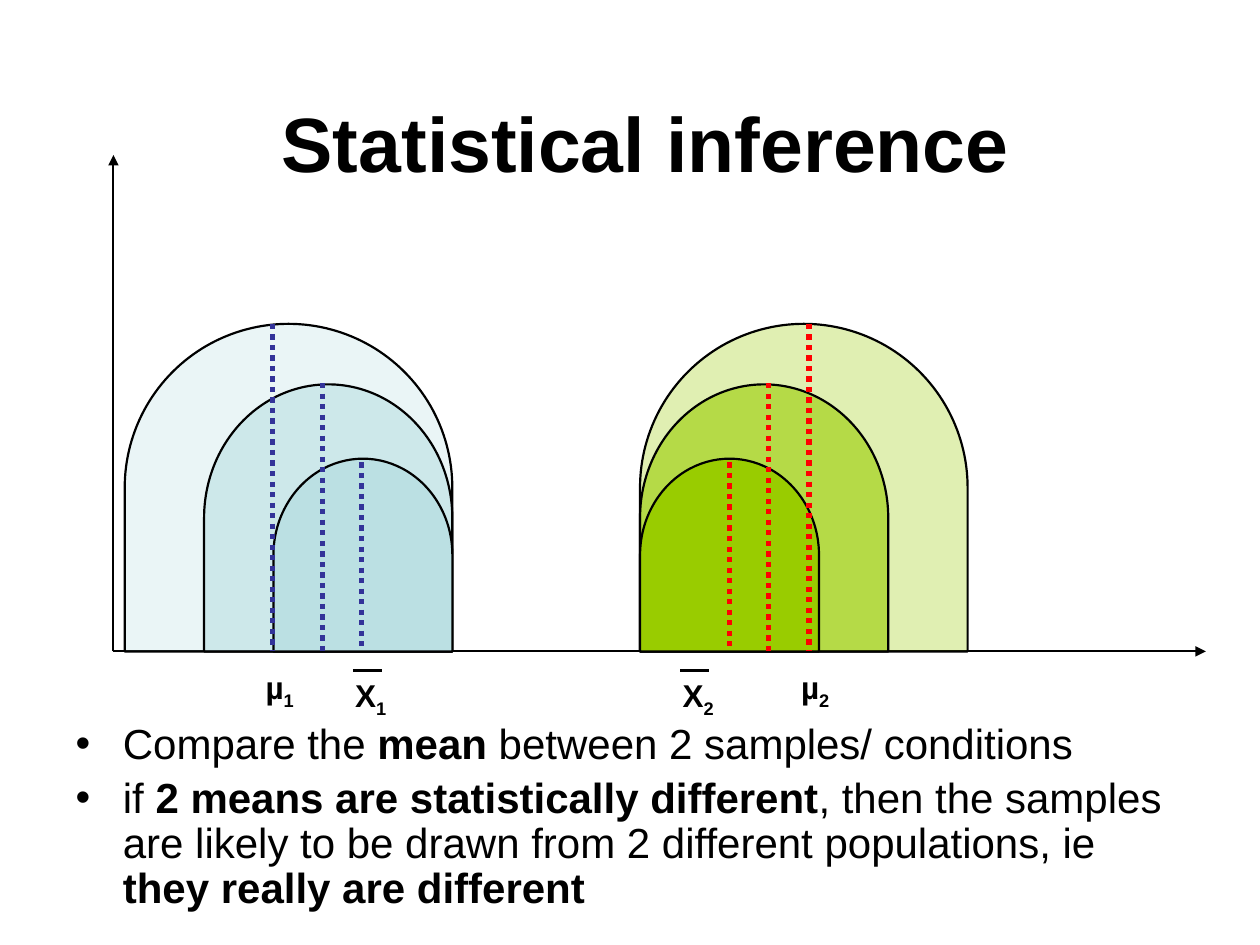
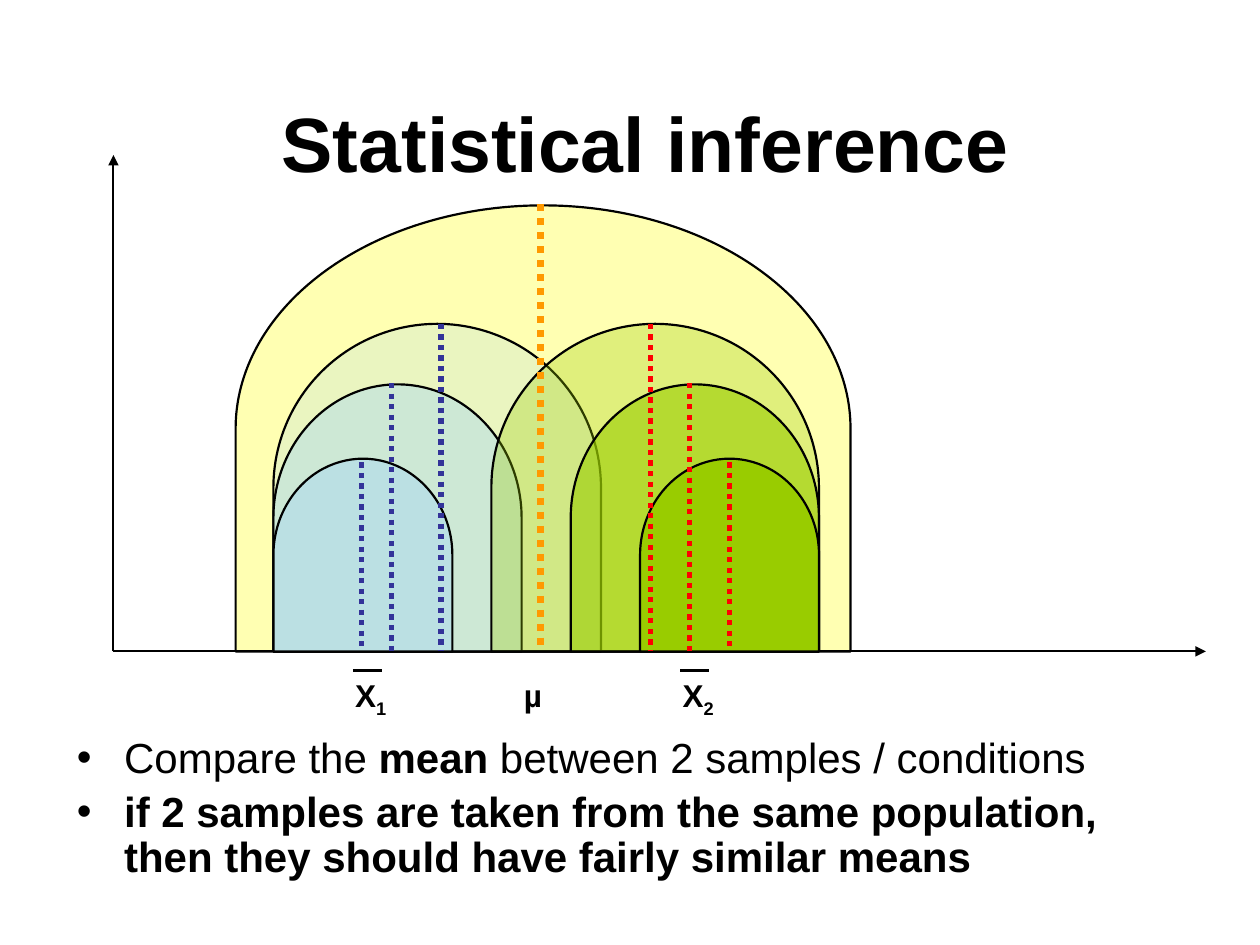
from dataclasses import dataclass

from lxml.etree import SubElement
from pptx import Presentation
from pptx.dml.color import RGBColor
from pptx.enum.dml import MSO_LINE_DASH_STYLE as Dash
from pptx.enum.shapes import MSO_CONNECTOR as Connector, MSO_SHAPE as Preset
from pptx.enum.text import MSO_ANCHOR as Anchor, MSO_AUTO_SIZE as AutoSize, PP_ALIGN as Align
from pptx.oxml.ns import qn
from pptx.util import Inches, Pt

# Shared look and geometry (lengths in inches)
FONT = "Arial"
BLACK, BLUE, NAVY, GREEN = "000000", "BBE0E3", "333399", "99CC00"
RED, YELLOW, ORANGE = "FF0000", "FFFF00", "FF9900"
TITLE_BOX = (0.67, 0.5, 8.91, 1.25)
AXIS_LEFT, AXIS_TOP, AXIS_RIGHT, BASE = 0.9, 1.23, 9.57, 5.17


@dataclass(frozen=True)
class Dome:
    width: float
    height: float
    opacity: int
    mean_top: float


POPULATION = Dome(4.88, 3.54, 30, 1.62)
NESTED = (Dome(2.6, 2.6, 30, 2.57), Dome(1.97, 2.12, 60, 3.04), Dome(1.42, 1.53, 100, 3.67))


@dataclass(frozen=True)
class Family:
    """Nested domes that share one vertical edge, with their mean lines."""
    edge: float
    side: str
    fill: str
    mean_color: str
    means: tuple[float, ...]
    domes: tuple[Dome, ...] = NESTED
    mean_width: float = 3


@dataclass(frozen=True)
class Label:
    left: float
    top: float
    letter: str
    index: str = ""
    bar: bool = False


@dataclass(frozen=True)
class Page:
    families: tuple[Family, ...]
    labels: tuple[Label, ...]
    body_box: tuple[float, ...]
    bullets: tuple


SAMPLE_LABELS = (Label(2.72, 5.32, "X", "1", True), Label(5.32, 5.32, "X", "2", True))

PAGES = (
    Page(
        (Family(3.59, "right", BLUE, NAVY, (2.16, 2.56, 2.87)),
         Family(5.08, "left", GREEN, RED, (6.42, 6.1, 5.79))),
        SAMPLE_LABELS + (Label(2.01, 5.25, "µ", "1"), Label(6.26, 5.25, "µ", "2")),
        (0.5, 5.69, 9, 1.68),
        ((("Compare the ", False), ("mean", True), (" between 2 samples/ conditions", False)),
         (("if ", False), ("2 means are statistically different", True),
          (", then the samples are likely to be drawn from 2 different populations, ie ", False),
          ("they really are different", True))),
    ),
    Page(
        (Family(1.87, "left", YELLOW, ORANGE, (4.29,), (POPULATION,), 4),
         Family(2.17, "left", BLUE, NAVY, (3.5, 3.11, 2.87)),
         Family(6.5, "right", GREEN, RED, (5.16, 5.47, 5.79))),
        SAMPLE_LABELS + (Label(4.06, 5.32, "µ"),),
        (0.51, 5.8, 9, 1.53),
        ((("Compare the ", False), ("mean", True), (" between 2 samples / conditions", False)),
         (("if 2 samples are taken from the same population, "
           "then they should have fairly similar means", True),)),
    ),
)


def rgb(color: str) -> RGBColor:
    return RGBColor.from_string(color)


def add_span(para, text: str, *, size: float, bold: bool = False,
             color: str = BLACK, baseline: int = 0) -> None:
    span = para.add_run()
    span.text = text
    font = span.font
    font.name, font.size, font.bold = FONT, Pt(size), bold
    font.color.rgb = rgb(color)
    if baseline:
        span._r.get_or_add_rPr().set("baseline", str(baseline * 1000))


def place(shape, box: tuple[float, ...]) -> None:
    shape.left, shape.top, shape.width, shape.height = map(Inches, box)


def add_line(slide, start: tuple[float, float], end: tuple[float, float], *,
             width: float = 1.25, color: str = BLACK, dotted: bool = False,
             arrow: bool = False) -> None:
    connector = slide.shapes.add_connector(
        Connector.STRAIGHT, *map(Inches, start), *map(Inches, end))
    line = connector.line
    line.width = Pt(width)
    line.color.rgb = rgb(color)
    if dotted:
        line.dash_style = Dash.ROUND_DOT
    if arrow:
        SubElement(line._get_or_add_ln(), qn("a:tailEnd"), type="triangle")
    SubElement(connector._element.spPr, qn("a:effectLst"))


def add_dome(slide, dome: Dome, family: Family) -> None:
    left = family.edge - (dome.width if family.side == "right" else 0)
    # A quarter turn swaps width and height around the centre
    center_x, center_y = left + dome.width / 2, BASE - dome.height / 2
    shape = slide.shapes.add_shape(
        Preset.FLOWCHART_DELAY,
        Inches(center_x - dome.height / 2), Inches(center_y - dome.width / 2),
        Inches(dome.height), Inches(dome.width))
    shape.rotation = 270
    shape.shadow.inherit = False
    shape.fill.solid()
    shape.fill.fore_color.rgb = rgb(family.fill)
    shape.line.color.rgb = rgb(BLACK)
    shape.line.width = Pt(1.25)
    if dome.opacity < 100:
        color = shape._element.spPr.find(qn("a:solidFill"))[0]
        SubElement(color, qn("a:alpha"), val=str(dome.opacity * 1000))


def add_means(slide, family: Family) -> None:
    for dome, mean in zip(family.domes, family.means):
        add_line(slide, (mean, dome.mean_top), (mean, BASE),
                 width=family.mean_width, color=family.mean_color, dotted=True)


def add_label(slide, label: Label) -> None:
    box = slide.shapes.add_textbox(
        Inches(label.left), Inches(label.top), Inches(0.6), Inches(0.4))
    box.text_frame.word_wrap = True
    para = box.text_frame.paragraphs[0]
    add_span(para, label.letter, size=18, bold=True)
    if label.index:
        add_span(para, label.index, size=18, bold=True, baseline=-25)
    if label.bar:
        start = label.left + 0.08
        add_line(slide, (start, label.top), (start + 0.23, label.top), width=1.75)


def fill_title(slide) -> None:
    title = slide.shapes.title
    place(title, TITLE_BOX)
    frame = title.text_frame
    frame.auto_size, frame.vertical_anchor = AutoSize.NONE, Anchor.MIDDLE
    para = frame.paragraphs[0]
    para.alignment = Align.CENTER
    add_span(para, "Statistical inference", size=44, bold=True)


def fill_body(slide, page: Page) -> None:
    body = slide.placeholders[1]
    place(body, page.body_box)
    frame = body.text_frame
    frame.auto_size = AutoSize.NONE
    for number, spans in enumerate(page.bullets):
        para = frame.add_paragraph() if number else frame.paragraphs[0]
        para.line_spacing, para.space_before = 0.9, Pt(4.8)
        for text, bold in spans:
            add_span(para, text, size=24, bold=bold)


def build_page(deck, page: Page) -> None:
    slide = deck.slides.add_slide(deck.slide_layouts[1])
    fill_title(slide)
    fill_body(slide, page)
    # Axes go over the population dome and under the samples
    population = [family for family in page.families if family.domes != NESTED]
    samples = [family for family in page.families if family.domes == NESTED]
    for family in population:
        add_dome(slide, POPULATION, family)
    for end in ((AXIS_LEFT, AXIS_TOP), (AXIS_RIGHT, BASE)):
        add_line(slide, (AXIS_LEFT, BASE), end, arrow=True)
    for family in samples:
        for dome in family.domes:
            add_dome(slide, dome, family)
    # Mean lines and their labels
    for family in samples + population:
        add_means(slide, family)
    for label in page.labels:
        add_label(slide, label)


def main() -> None:
    deck = Presentation()
    deck.slide_width, deck.slide_height = Inches(10), Inches(7.5)
    for page in PAGES:
        build_page(deck, page)
    deck.save("out.pptx")


if __name__ == "__main__":
    main()
